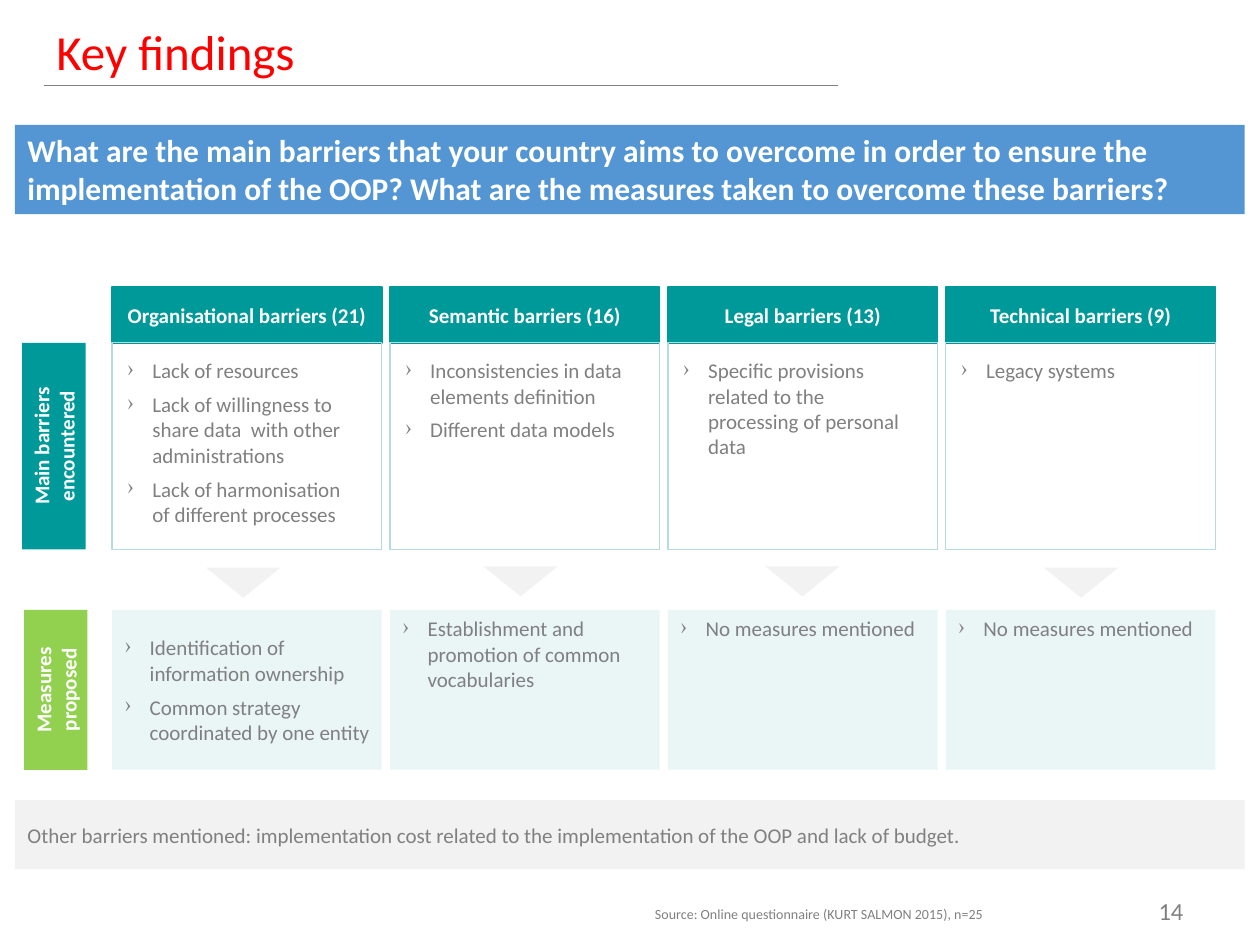
from lxml import etree
from pptx import Presentation
from pptx import util as u
from pptx.dml.color import RGBColor
from pptx.enum import shapes, text
from pptx.oxml.ns import qn

# Content: heading, barriers, measures, anchor of measures, marker centre
COLS = [
    ("Organisational barriers (21)",
     ["Lack of resources",
      "Lack of willingness to share data  with other administrations",
      "Lack of harmonisation of different processes"],
     ["Identification of information ownership",
      "Common strategy coordinated by one entity"], "mid", (139, 333)),
    ("Semantic barriers (16)",
     ["Inconsistencies in data elements definition", "Different data models"],
     ["Establishment and promotion of common vocabularies"],
     "top", (297.5, 332.2)),
    ("Legal barriers (13)",
     ["Specific provisions related to the processing of personal data"],
     ["No measures mentioned"], "top", (458.6, 332.2)),
    ("Technical barriers (9)", ["Legacy systems"],
     ["No measures mentioned"], "top", (617.8, 333)),
]
TITLE = "Key findings"
ASK = ("What are the main barriers that your country aims to overcome in order "
       "to ensure the implementation of the OOP? What are the measures taken "
       "to overcome these barriers?")
OTHER = ("Other barriers mentioned: implementation cost related to the "
         "implementation of the OOP and lack of budget.")
SOURCE = "Source: Online questionnaire (KURT SALMON 2015), n=25"

THEME = dict(
    font="Calibri", title="FF0000", white="FFFFFF", grey="808080",
    blue="5496D4", teal="009999", green="92D050", pale="EAF5F6",
    edge="B6DCDF", light="F2F2F2",
    big=28, ask=18, num=14, body=12, small=8)
LEFT, STEP, WIDE = 64.1, 158.8, 154.1
HEAD, BARS, MEAS = (164.2, 31.7), (195.9, 118), (348.5, 91.4)  # top, height
INSET = (7.2, 3.6, 7.2, 3.6)
ALIGN = dict(left=text.PP_ALIGN.LEFT, mid=text.PP_ALIGN.CENTER,
             right=text.PP_ALIGN.RIGHT)
ANCHOR = dict(top=text.MSO_ANCHOR.TOP, mid=text.MSO_ANCHOR.MIDDLE)

deck = Presentation()
deck.slide_width, deck.slide_height = u.Pt(720), u.Pt(540)
slide = deck.slides.add_slide(deck.slide_layouts[6])


def tint(name):
    return RGBColor.from_string(THEME[name])


def bullet(para):
    props = para._p.get_or_add_pPr()
    props.set("marL", str(u.Pt(14.4)))
    props.set("indent", str(-u.Pt(14.4)))
    clr = etree.SubElement(props, qn("a:buClr"))
    etree.SubElement(clr, qn("a:srgbClr"), val=THEME["grey"])
    etree.SubElement(props, qn("a:buChar"), char="›")


def write(shape, lines, size="body", color="grey", bold=False, align="left",
          anchor="top", inset=INSET, dots=False):
    frame = shape.text_frame
    frame.word_wrap = True
    frame.vertical_anchor = ANCHOR[anchor]
    (frame.margin_left, frame.margin_top,
     frame.margin_right, frame.margin_bottom) = map(u.Pt, inset)
    for i, line in enumerate(lines):
        para = frame.add_paragraph() if i else frame.paragraphs[0]
        para.alignment = ALIGN[align]
        if i:
            para.space_before = u.Pt(5)
        if dots:
            bullet(para)
        run = para.add_run()
        run.text = line
        font = run.font
        font.name, font.size, font.bold = THEME["font"], u.Pt(THEME[size]), bold
        font.color.rgb = tint(color)


def block(x, y, w, h, fill=None, line=None, width=1, turn=0,
          kind=shapes.MSO_SHAPE.RECTANGLE):
    shape = slide.shapes.add_shape(kind, *map(u.Pt, (x, y, w, h)))
    shape.shadow.inherit = False
    shape.rotation = turn
    if fill:
        shape.fill.solid()
        shape.fill.fore_color.rgb = tint(fill)
    else:
        shape.fill.background()
    if line:
        shape.line.color.rgb = tint(line)
        shape.line.width = u.Pt(width)
    else:
        shape.line.fill.background()
    return shape


def label(x, y, w, h, words, **form):
    write(slide.shapes.add_textbox(*map(u.Pt, (x, y, w, h))), [words], **form)


# Title and rule
rule = slide.shapes.add_connector(
    shapes.MSO_CONNECTOR.STRAIGHT, *map(u.Pt, (478.8, 49, 25.2, 49)))
rule.line.color.rgb, rule.line.width = tint("grey"), u.Pt(0.75)
etree.SubElement(rule._element.spPr, qn("a:effectLst"))
label(25.2, 9.4, 453.6, 39.6, TITLE, size="big", color="title", anchor="mid")

# Question banner
write(block(8.6, 71.3, 702.7, 51.1, "blue"), [ASK],
      size="ask", color="white", bold=True)

# Barrier columns
for i, (head, bars, meas, anchor, (cx, cy)) in enumerate(COLS):
    x = LEFT + i * STEP
    write(block(x, HEAD[0], WIDE, HEAD[1], "teal", "teal"), [head],
          color="white", bold=True, align="mid", anchor="mid",
          inset=(1.4,) * 4)
    write(block(x, BARS[0], WIDE, BARS[1], line="edge", width=0.75), bars,
          dots=True, inset=(8.6, 8.6, 11.5, 5.8))
    write(block(x, MEAS[0], WIDE, MEAS[1], "pale"), meas,
          dots=True, anchor=anchor)
    mark = block(cx - 8.6, cy - 21.2, 17.2, 42.4, "light", turn=90,
                 kind=shapes.MSO_SHAPE.PENTAGON)
    mark.adjustments[0] = 1

# Row labels, turned to read upwards
for words, cx, (top, high), fill in [
        ("Main barriers encountered", 30.8, BARS, "teal"),
        ("Measures proposed", 31.9, MEAS, "green")]:
    side = block(cx - high / 2, top + high / 2 - 18.1, high, 36.2, fill,
                 turn=270)
    write(side, [words], color="white", bold=True, align="mid")

# Remark and footer
write(block(8.6, 457.2, 702.7, 39.5, "light"), [OTHER], anchor="mid")
label(632.2, 508.3, 51.1, 39.6, "14", size="num", align="right")
label(367.2, 514.1, 288, 17.3, SOURCE, size="small")

deck.save("out.pptx")
